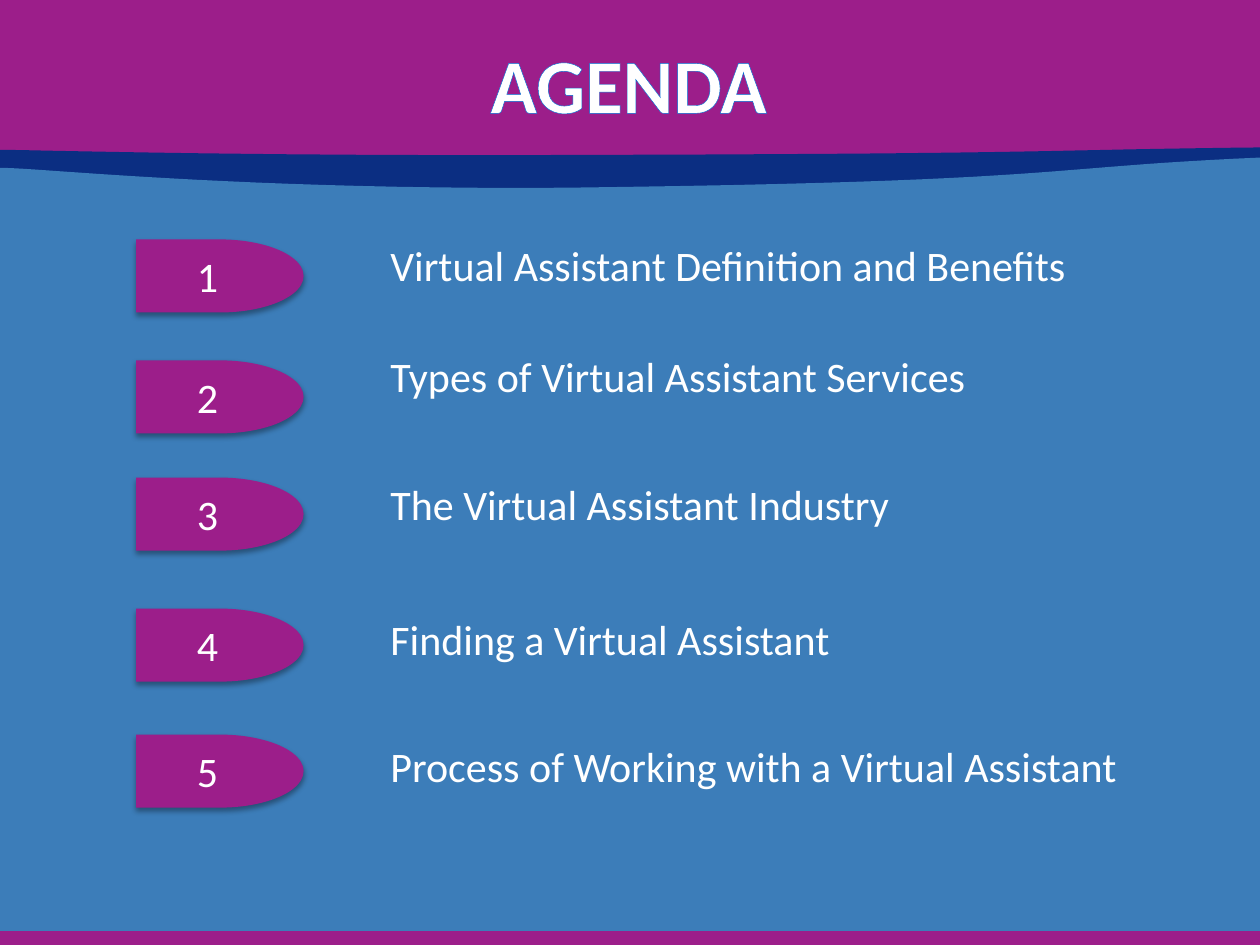
from dataclasses import dataclass

from lxml import etree
from pptx import Presentation
from pptx.dml.color import RGBColor
from pptx.enum.shapes import MSO_SHAPE
from pptx.enum.text import MSO_ANCHOR, PP_ALIGN
from pptx.oxml import parse_xml
from pptx.oxml.ns import nsdecls
from pptx.shapes.base import BaseShape
from pptx.slide import Slide
from pptx.util import Pt

RECT, DELAY = MSO_SHAPE.RECTANGLE, MSO_SHAPE.FLOWCHART_DELAY
TOP, MIDDLE = MSO_ANCHOR.TOP, MSO_ANCHOR.MIDDLE
LEFT, CENTER = PP_ALIGN.LEFT, PP_ALIGN.CENTER
PURPLE = RGBColor(0x9C, 0x1E, 0x8A)
NAVY = RGBColor(0x0B, 0x2E, 0x82)
BLUE = RGBColor(0x3C, 0x7D, 0xB9)
WHITE = RGBColor(0xFF, 0xFF, 0xFF)
FONT = "Calibri"
EDGE, SPAN = -2.16, 722.88
STEPS = 24
SHADOW = (
    f'<a:outerShdw {nsdecls("a")} blurRad="40000" dist="23000" dir="5400000" rotWithShape="0">'
    '<a:srgbClr val="000000"><a:alpha val="35000"/></a:srgbClr></a:outerShdw>'
)
STROKE = (
    f'<a:ln {nsdecls("a")} w="12700"><a:solidFill>'
    '<a:srgbClr val="0070D5"/></a:solidFill></a:ln>'
)

Point = tuple[float, float]
Box = tuple[float, float, float, float]


@dataclass(frozen=True)
class Wave:
    curves: tuple[tuple[Point, Point, Point, Point], ...]
    base: float
    color: RGBColor


@dataclass(frozen=True)
class Item:
    label: str
    tab_top: float
    text_top: float


WAVES = (
    Wave((((-2.16, 85.68), (-2.16, 84.96), (115.92, 89.28), (322.56, 88.56)),
          ((322.56, 88.56), (613.44, 87.84), (587.52, 85.68), (720, 84.24))), 210.24, NAVY),
    Wave((((-2.16, 96.48), (-2.16, 92.88), (115.92, 108.72), (323.28, 107.28)),
          ((323.28, 107.28), (614.16, 103.68), (588.24, 95.76), (720.72, 90))), 540, BLUE),
)
ITEMS = (
    Item("Virtual Assistant Definition and Benefits", 136.8, 133.2),
    Item("Types of Virtual Assistant Services", 205.92, 196.56),
    Item("The Virtual Assistant Industry", 272.88, 270),
    Item("Finding a Virtual Assistant", 347.76, 347.04),
    Item("Process of Working with a Virtual Assistant", 419.76, 419.76),
)


def paint(shape: BaseShape, color: RGBColor) -> None:
    """Give a shape a flat fill with no line or shadow."""
    shape.shadow.inherit = False
    shape.fill.solid()
    shape.fill.fore_color.rgb = color
    shape.line.fill.background()


def add_block(slide: Slide, kind: MSO_SHAPE, box: Box) -> BaseShape:
    """Add a purple preset shape."""
    shape = slide.shapes.add_shape(kind, *map(Pt, box))
    paint(shape, PURPLE)
    return shape


def bend(curve: tuple[Point, ...], t: float) -> Point:
    """Find the point at t on a cubic curve."""
    parts = ((1 - t) ** 3, 3 * t * (1 - t) ** 2, 3 * t * t * (1 - t), t ** 3)
    return tuple(sum(k * p[axis] for k, p in zip(parts, curve)) for axis in (0, 1))


def add_wave(slide: Slide, wave: Wave) -> None:
    """Add a filled band whose top edge is curved."""
    edge = [bend(curve, n / STEPS) for curve in wave.curves for n in range(1, STEPS + 1)]
    start, end = wave.curves[0][0], edge[-1]
    spots = edge + [(end[0], wave.base), (start[0], wave.base)]
    pen = slide.shapes.build_freeform(Pt(start[0]), Pt(start[1]))
    pen.add_line_segments([(Pt(x), Pt(y)) for x, y in spots], close=True)
    paint(pen.convert_to_shape(), wave.color)


def write(shape: BaseShape, text: str, size: float, align: PP_ALIGN,
          anchor: MSO_ANCHOR, bold: bool = False) -> etree._Element:
    """Set white text in a shape and return its run properties."""
    frame = shape.text_frame
    frame.word_wrap = True
    frame.vertical_anchor = anchor
    frame.text = text
    line = frame.paragraphs[0]
    line.alignment = align
    run = line.runs[0]
    run.font.name, run.font.size, run.font.bold = FONT, Pt(size), bold
    run.font.color.rgb = WHITE
    return run.font._element


def add_title(slide: Slide, text: str) -> None:
    """Add the outlined heading."""
    shape = slide.shapes.add_textbox(Pt(35.28), Pt(2.16), Pt(648), Pt(90))
    write(shape, text, 44, CENTER, MIDDLE, True).insert(0, parse_xml(STROKE))


def add_item(slide: Slide, rank: int, item: Item) -> None:
    """Add a numbered tab and its label."""
    tab = add_block(slide, DELAY, (77.76, item.tab_top, 95.76, 41.76))
    tab._element.spPr.find("{*}effectLst").append(parse_xml(SHADOW))
    write(tab, str(rank), 24, CENTER, MIDDLE)
    label = slide.shapes.add_textbox(Pt(216), Pt(item.text_top), Pt(450), Pt(41.76))
    write(label, item.label, 24, LEFT, TOP)


def main() -> None:
    """Build the agenda slide."""
    deck = Presentation()
    deck.slide_width, deck.slide_height = Pt(720), Pt(540)
    slide = deck.slides.add_slide(deck.slide_layouts[6])
    add_block(slide, RECT, (EDGE, 0, SPAN, 126))
    for wave in WAVES:
        add_wave(slide, wave)
    add_block(slide, RECT, (EDGE, 532.08, SPAN, 12.24))
    add_title(slide, "AGENDA")
    for rank, item in enumerate(ITEMS, 1):
        add_item(slide, rank, item)
    deck.save("out.pptx")


if __name__ == "__main__":
    main()
